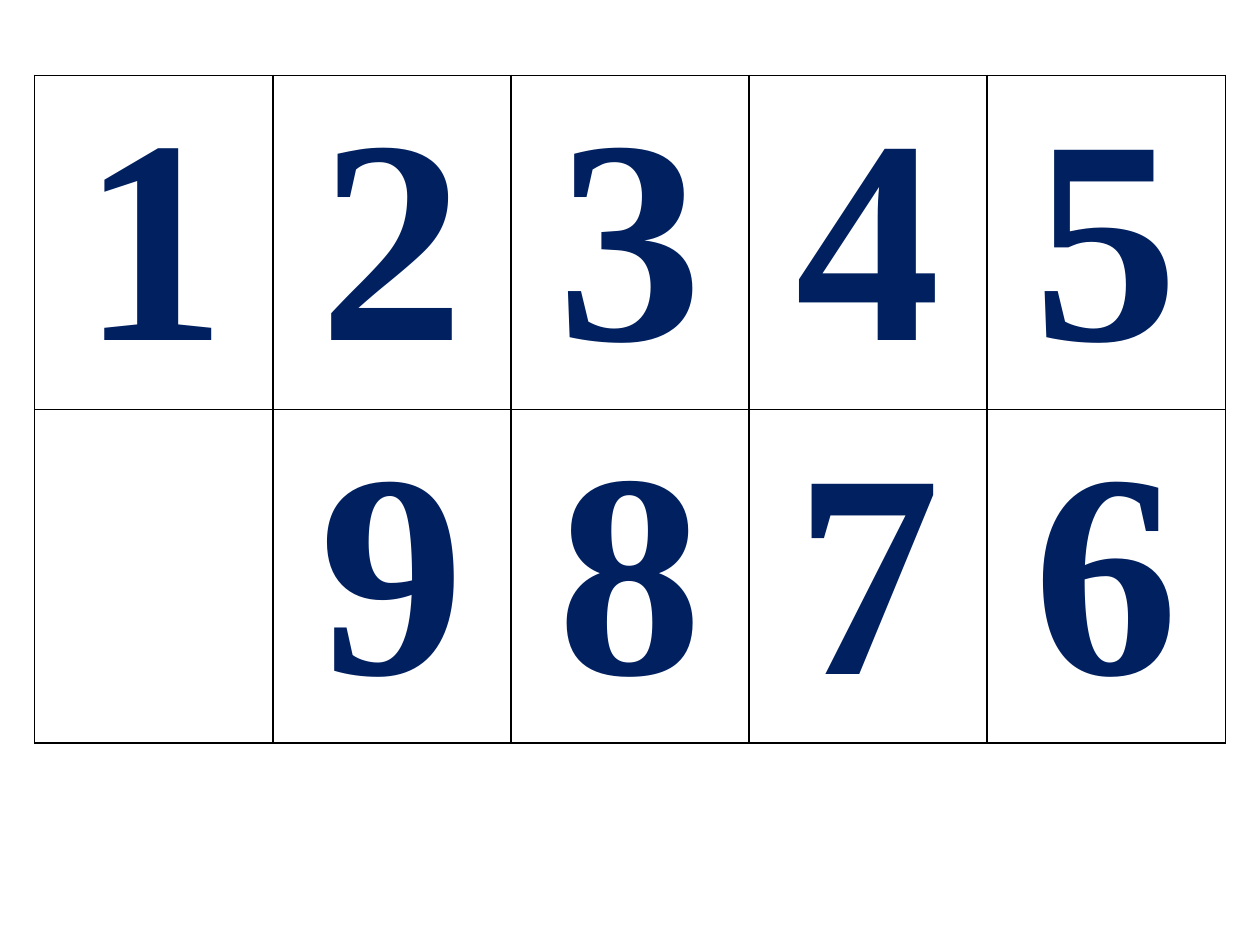
"""Build a slide with a two-row grid of the digits 1 to 9."""
from dataclasses import dataclass

from lxml import etree
from pptx import Presentation
from pptx.dml.color import RGBColor
from pptx.enum.text import MSO_ANCHOR, PP_ALIGN
from pptx.oxml.ns import qn
from pptx.slide import Slide
from pptx.table import _Cell
from pptx.util import Cm, Pt

MIDDLE = MSO_ANCHOR.MIDDLE
CENTER = PP_ALIGN.CENTER
NAVY = RGBColor(0x00, 0x20, 0x60)
BLACK = RGBColor(0x00, 0x00, 0x00)
FONT_NAME = "Times New Roman"
DIGIT_SIZE = Pt(166)
BORDER_WIDTH = Pt(1)
BORDER_TAGS = ("a:lnL", "a:lnR", "a:lnT", "a:lnB")


@dataclass(frozen=True)
class DigitGrid:
    """Digits by row, with the place and cell size of their table."""

    rows: tuple[tuple[str, ...], ...]
    left: int
    top: int
    cell_width: int
    cell_height: int


GRID = DigitGrid(
    rows=(("1", "2", "3", "4", "5"), ("", "9", "8", "7", "6")),
    left=Cm(0.7),
    top=Cm(1.52),
    cell_width=Cm(4.8),
    cell_height=Cm(6.73),
)


def add_borders(cell: _Cell) -> None:
    """Draw a thin solid line on all four sides of a cell."""
    properties = cell._tc.get_or_add_tcPr()
    for position, tag in enumerate(BORDER_TAGS):
        line = etree.Element(qn(tag), w=str(BORDER_WIDTH))
        fill = etree.SubElement(line, qn("a:solidFill"))
        etree.SubElement(fill, qn("a:srgbClr"), val=str(BLACK))
        properties.insert(position, line)


def fill_cell(cell: _Cell, digit: str) -> None:
    """Format one cell and write its digit, if it has one."""
    cell.fill.background()
    cell.vertical_anchor = MIDDLE
    cell.margin_top = cell.margin_bottom = 0
    add_borders(cell)
    if not digit:
        return
    paragraph = cell.text_frame.paragraphs[0]
    paragraph.alignment = CENTER
    run = paragraph.add_run()
    run.text = digit
    run.font.name = FONT_NAME
    run.font.size = DIGIT_SIZE
    run.font.bold = True
    run.font.color.rgb = NAVY


def add_digit_table(slide: Slide, grid: DigitGrid) -> None:
    """Add the table of digits to the slide."""
    row_count, column_count = len(grid.rows), len(grid.rows[0])
    table = slide.shapes.add_table(
        row_count,
        column_count,
        grid.left,
        grid.top,
        grid.cell_width * column_count,
        grid.cell_height * row_count,
    ).table
    table.first_row = False
    table.horz_banding = False
    for row_index, digits in enumerate(grid.rows):
        for column_index, digit in enumerate(digits):
            fill_cell(table.cell(row_index, column_index), digit)


def main() -> None:
    """Create and save the presentation."""
    presentation = Presentation()
    presentation.slide_width = Cm(25.4)
    presentation.slide_height = Cm(19.05)
    slide = presentation.slides.add_slide(presentation.slide_layouts[6])
    add_digit_table(slide, GRID)
    presentation.save("out.pptx")


if __name__ == "__main__":
    main()
